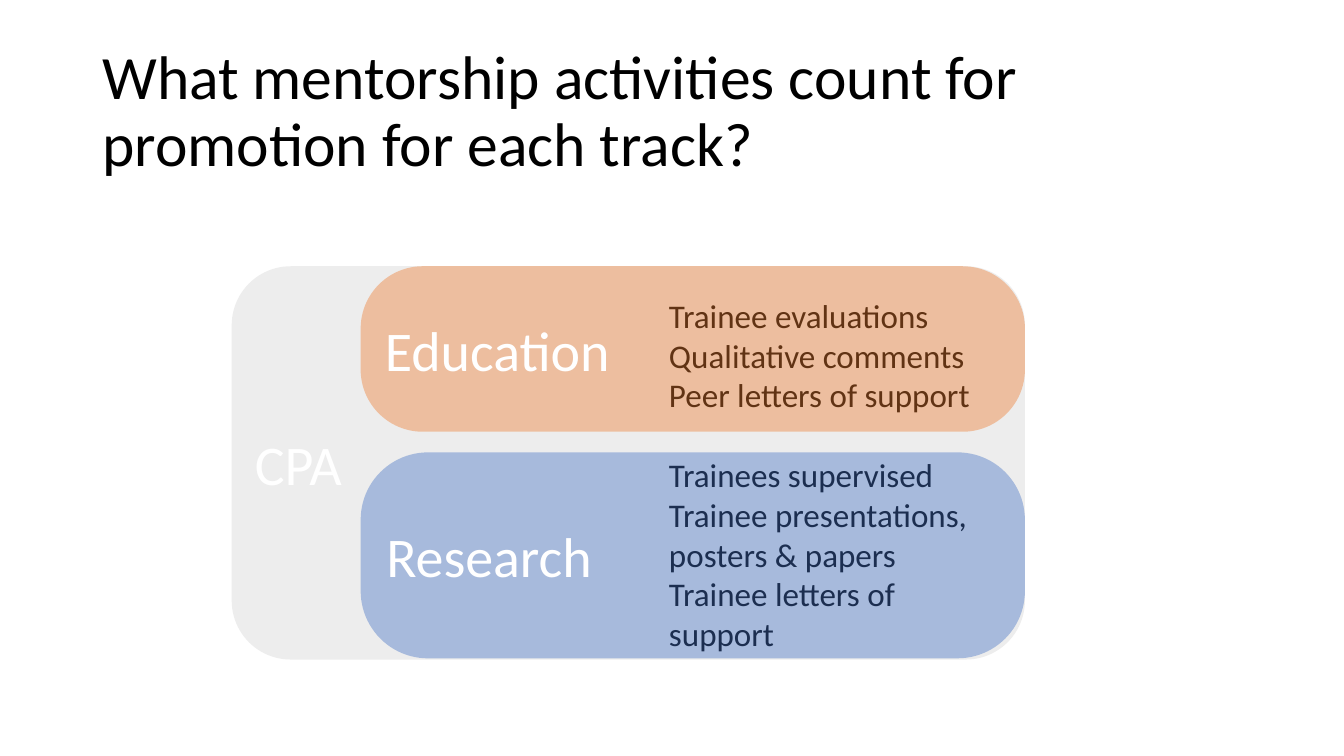
from lxml.etree import SubElement
from pptx import Presentation
from pptx.dml.color import RGBColor
from pptx.enum.shapes import MSO_SHAPE
from pptx.enum.text import MSO_ANCHOR
from pptx.oxml.ns import qn
from pptx.util import Cm, Pt

COLORS = {
    "panel": "EDEDED",
    "education": "ED7D31",
    "research": "4472C4",
    "label": "FFFFFF",
    "text": "000000",
}
FONT = "Calibri"
CARD_OPACITY = 41
LIST_SIZE = 23.6


def write_text(shape, lines, size, color="text", margin=0.25, line_spacing=1.0):
    """Fill a shape with one paragraph per line, centred vertically."""
    frame = shape.text_frame
    frame.word_wrap = True
    frame.vertical_anchor = MSO_ANCHOR.MIDDLE
    frame.margin_left = Cm(margin)
    frame.text = "\n".join(lines)
    for paragraph in frame.paragraphs:
        paragraph.line_spacing = line_spacing
        paragraph.font.size = Pt(size)
        paragraph.font.name = FONT
        paragraph.font.color.rgb = RGBColor.from_string(COLORS[color])
    return frame.paragraphs


def add_rounded_box(label, color, left, top, width, height, corner, opacity=100):
    box = slide.shapes.add_shape(
        MSO_SHAPE.ROUNDED_RECTANGLE, Cm(left), Cm(top), Cm(width), Cm(height))
    box.adjustments[0] = corner
    box.shadow.inherit = False
    box.line.fill.background()
    box.fill.solid()
    box.fill.fore_color.rgb = RGBColor.from_string(COLORS[color])
    if opacity < 100:
        fill_color = box.fill._xPr.find(qn("a:solidFill"))[0]
        SubElement(fill_color, qn("a:alpha")).set("val", str(opacity * 1000))
    for paragraph in write_text(box, [label], 40, "label", margin=0.15):
        paragraph.alignment = 1


presentation = Presentation()
presentation.slide_width = Cm(33.87)
presentation.slide_height = Cm(19.05)
slide = presentation.slides.add_slide(presentation.slide_layouts[6])

title = slide.shapes.add_textbox(Cm(2.33), Cm(1.01), Cm(29.21), Cm(3.68))
write_text(title, ["What mentorship activities count for promotion for each track?"],
           44, line_spacing=0.9)

add_rounded_box("CPA", "panel", 5.84, 6.71, 19.99, 9.91, 0.15)

# The activity list lies beneath the translucent cards, which tint its text.
education_activities = ["Trainee evaluations", "Qualitative comments", "Peer letters of support"]
research_activities = ["Trainees supervised", "Trainee presentations, posters & papers",
                       "Trainee letters of support"]
activity_list = slide.shapes.add_textbox(Cm(16.61), Cm(6.71), Cm(8.76), Cm(10.49))
activities = write_text(activity_list, education_activities + research_activities, LIST_SIZE)
activities[len(education_activities)].space_before = Pt(28.8)

cards = [
    ("Education", "education", 6.71, 4.17, 0.376),
    ("Research", "research", 11.4, 5.19, 0.327),
]
for label, color, top, height, corner in cards:
    add_rounded_box(label, color, 9.09, top, 16.74, height, corner, CARD_OPACITY)

presentation.save("out.pptx")
